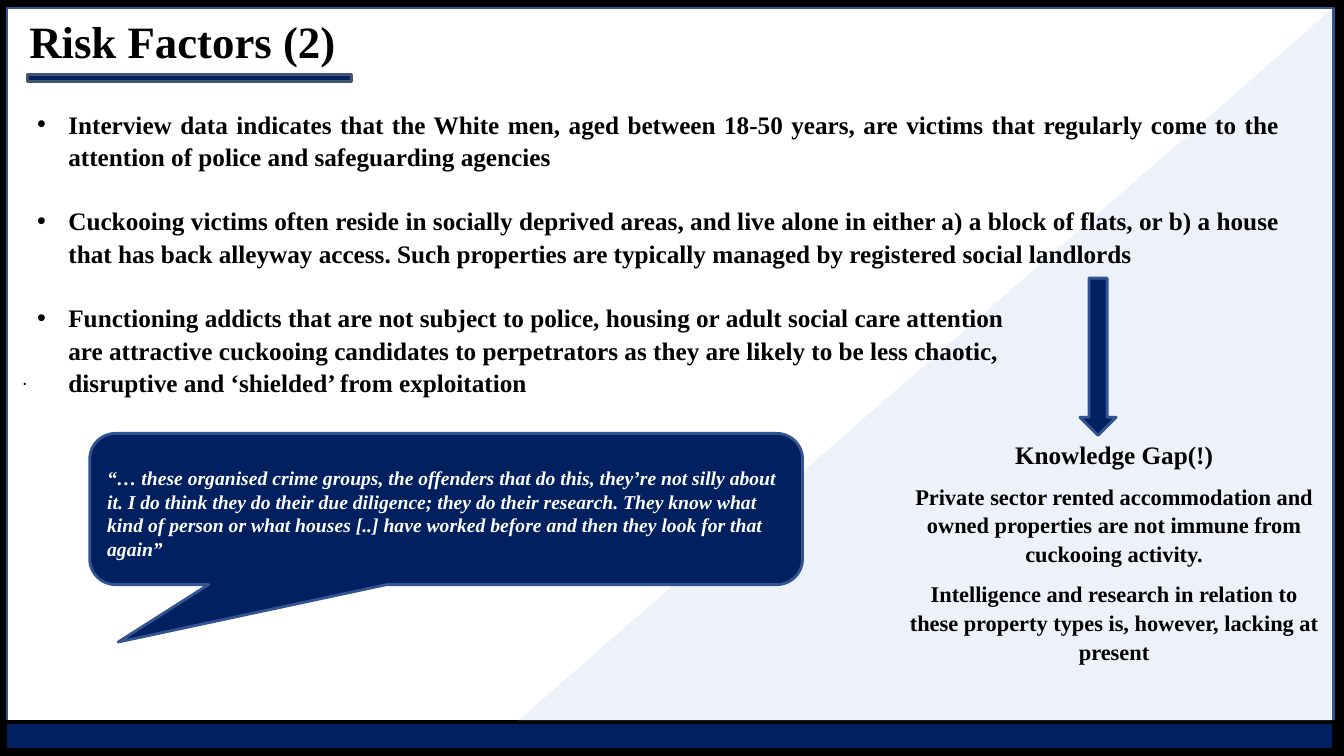
"""Build the Risk Factors slide."""
from lxml import etree
from pptx import Presentation
from pptx.dml.color import RGBColor
from pptx.enum.shapes import MSO_SHAPE
from pptx.enum.text import MSO_ANCHOR, PP_ALIGN
from pptx.oxml.ns import qn
from pptx.util import Inches, Pt

BLACK = RGBColor(0x00, 0x00, 0x00)
WHITE = RGBColor(0xFF, 0xFF, 0xFF)
NAVY = RGBColor(0x00, 0x20, 0x60)
BLUE = RGBColor(0x32, 0x54, 0x91)
SLATE = RGBColor(0x44, 0x54, 0x6A)
PALE = RGBColor(0xED, 0xF1, 0xF9)
RECT = MSO_SHAPE.RECTANGLE
WEDGE = MSO_SHAPE.RIGHT_TRIANGLE
ARROW = MSO_SHAPE.RIGHT_ARROW
QUOTE = MSO_SHAPE.ROUNDED_RECTANGULAR_CALLOUT
LEFT, CENTER, JUST = PP_ALIGN.LEFT, PP_ALIGN.CENTER, PP_ALIGN.JUSTIFY
TOP, MIDDLE, BOTTOM = MSO_ANCHOR.TOP, MSO_ANCHOR.MIDDLE, MSO_ANCHOR.BOTTOM

POINTS = [
    ("Interview data indicates that the White men, aged between 18-50 years, "
     "are victims that regularly come to the attention of police and "
     "safeguarding agencies", JUST),
    ("Cuckooing victims often reside in socially deprived areas, and live alone "
     "in either a) a block of flats, or b) a house that has back alleyway access. "
     "Such properties are typically managed by registered social landlords", JUST),
    ("Functioning addicts that are not subject to police, housing or adult social "
     "care attention\vare attractive cuckooing candidates to perpetrators as they "
     "are likely to be less chaotic,\vdisruptive and ‘shielded’ from exploitation",
     LEFT),
]
GAPS = [
    ("Knowledge Gap(!)", 18),
    ("Private sector rented accommodation and owned properties are not immune "
     "from cuckooing activity.", 16),
    ("Intelligence and research in relation to these property types is, however, "
     "lacking at present", 16),
]
SAYING = (
    "“… these organised crime groups, the offenders that do this, they’re not "
    "silly about it. I do think they do their due diligence; they do their "
    "research. They know what kind of person or what houses [..] have worked "
    "before and then they look for that again”")


def assign(item, values):
    """Set each named attribute on an item."""
    for name, value in values.items():
        setattr(item, name, value)


class Deck:
    """Hold the style and the current slide."""

    face = "Times New Roman"

    def __init__(self):
        self.prs = Presentation()
        assign(self.prs, {"slide_width": Inches(13.33), "slide_height": Inches(7.5)})
        self.slide = self.prs.slides.add_slide(self.prs.slide_layouts[6])
        fill = self.slide.background.fill
        fill.solid()
        fill.fore_color.rgb = BLACK

    def shape(self, kind, box, fill, line=None, width=2, turn=0, adjust=()):
        """Add a filled preset shape."""
        item = self.slide.shapes.add_shape(kind, *map(Inches, box))
        item.shadow.inherit = False
        item.rotation = turn
        item.fill.solid()
        item.fill.fore_color.rgb = fill
        if line is None:
            item.line.fill.background()
        else:
            item.line.color.rgb = line
            item.line.width = Pt(width)
        for spot, value in enumerate(adjust):
            item.adjustments[spot] = value
        return item

    def frame(self, box, anchor=TOP):
        """Add a wrapping text box and return its frame."""
        frame = self.slide.shapes.add_textbox(*map(Inches, box)).text_frame
        assign(frame, {"word_wrap": True, "vertical_anchor": anchor})
        return frame

    def para(self, frame, text, size, color=BLACK, align=LEFT, space=1.0,
             after=0, **font):
        """Write the next paragraph of a frame."""
        para = frame.paragraphs[-1]
        if para.runs:
            para = frame.add_paragraph()
        para.text = text
        assign(para, {"alignment": align, "line_spacing": space,
                      "space_after": Pt(after)})
        style = {"name": self.face, "size": Pt(size), "bold": True, **font}
        for run in para.runs:
            assign(run.font, style)
            run.font.color.rgb = color
        return para

    def bullet(self, para, indent):
        """Give a paragraph a hanging bullet."""
        props = para._p.get_or_add_pPr()
        props.set("marL", str(Inches(indent)))
        props.set("indent", str(-Inches(indent)))
        etree.SubElement(props, qn("a:buFont")).set("typeface", "Arial")
        etree.SubElement(props, qn("a:buChar")).set("char", "•")

    def shade(self, para):
        """Cast a soft shadow behind the text of a paragraph."""
        fill = para.runs[0]._r.get_or_add_rPr().find(qn("a:solidFill"))
        effects = etree.Element(qn("a:effectLst"))
        fill.addnext(effects)
        shadow = etree.SubElement(effects, qn("a:outerShdw"), blurRad="38100",
                                  dist="38100", dir="2700000", algn="tl")
        tint = etree.SubElement(shadow, qn("a:srgbClr"), val=str(BLACK))
        etree.SubElement(tint, qn("a:alpha"), val="43000")


def main():
    """Draw the slide and save it."""
    deck = Deck()
    page = deck.shape(RECT, (0.07, 0.08, 13.16, 7.33), WHITE, BLUE).text_frame
    assign(page, {"vertical_anchor": MIDDLE, "margin_left": Inches(0.15)})
    deck.para(page, ".", 14, name="Arial", bold=False)
    deck.shape(RECT, (0.05, 7.16, 13.18, 0.28), NAVY, BLACK, 3)
    deck.shape(RECT, (0.27, 0.74, 3.22, 0.07), NAVY, SLATE)

    title = deck.frame((0.1, 0.03, 3.42, 0.7), BOTTOM)
    deck.shade(deck.para(title, "Risk Factors (2)", 32, align=CENTER, space=0.9))
    deck.shape(WEDGE, (5.65, -0.41, 7.05, 8.06), PALE, turn=270)

    body = deck.frame((0.27, 1.01, 12.52, 3.02))
    for text, align in POINTS:
        para = deck.para(body, text, 18, align=align, space=1.07, after=23)
        deck.bullet(para, 0.31)

    side = deck.frame((8.87, 4.29, 4.36, 2.38))
    for text, size in GAPS:
        deck.para(side, text, size, align=CENTER, space=1.07, after=8)
    deck.shape(ARROW, (10.11, 3.36, 1.56, 0.36), NAVY, BLUE, turn=90)

    quote = deck.shape(QUOTE, (0.89, 4.3, 7.07, 1.5), NAVY, BLUE,
                       adjust=(-0.46, 0.88, 0.17)).text_frame
    assign(quote, {"word_wrap": True, "vertical_anchor": MIDDLE,
                   "margin_top": Inches(0.13)})
    deck.para(quote, SAYING, 14, WHITE, italic=True)
    deck.prs.save("out.pptx")


if __name__ == "__main__":
    main()
